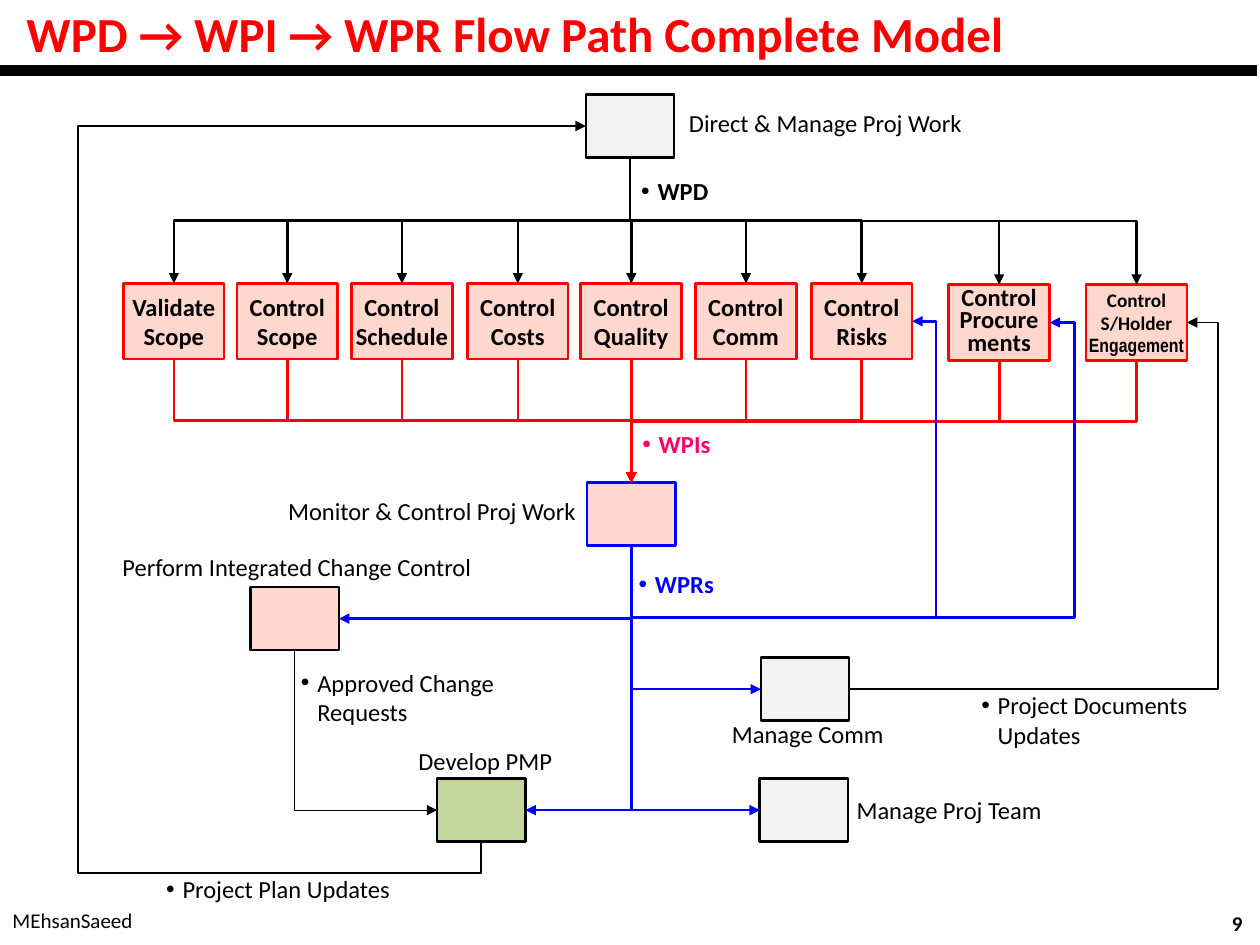
from lxml.etree import SubElement
from pptx import Presentation
from pptx.dml.color import RGBColor
from pptx.enum.shapes import MSO_CONNECTOR, MSO_SHAPE
from pptx.enum.text import MSO_ANCHOR, PP_ALIGN
from pptx.oxml.ns import qn
from pptx.util import Inches, Pt

COLORS = {"black": "000000", "red": "FF0000", "blue": "0000FF", "pink": "FF0066",
          "peach": "FFD7CD", "gray": "F2F2F2", "green": "C3D69B"}
TOP, LEFT, BOTTOM, RIGHT = range(4)


def rgb(name):
    return RGBColor.from_string(COLORS[name])


def style(paragraph, size=14, color="black", bold=False, align=PP_ALIGN.LEFT):
    paragraph.alignment = align
    font = paragraph.font
    font.name, font.size, font.bold = "Calibri", Pt(size), bold
    font.color.rgb = rgb(color)


def add_text(slide, box, text, bullet=False, anchor=MSO_ANCHOR.TOP, **look):
    frame = slide.shapes.add_textbox(*map(Inches, box)).text_frame
    frame.word_wrap = True
    frame.vertical_anchor = anchor
    paragraph = frame.paragraphs[0]
    paragraph.text = text
    style(paragraph, **look)
    if bullet:
        properties = paragraph._p.get_or_add_pPr()
        properties.set("marL", str(Inches(0.13)))
        properties.set("indent", str(-Inches(0.13)))
        SubElement(properties, qn("a:buFont")).set("typeface", "Arial")
        SubElement(properties, qn("a:buChar")).set("char", "•")


def add_box(slide, box, fill, line):
    shape = slide.shapes.add_shape(MSO_SHAPE.RECTANGLE, *map(Inches, box))
    shape.shadow.inherit = False
    shape.fill.solid()
    shape.fill.fore_color.rgb = rgb(fill)
    shape.line.color.rgb = rgb(line)
    shape.line.width = Pt(1.5)
    return shape


def side(shape, index):
    """Middle of a rectangle's side."""
    x, y = shape.left + shape.width // 2, shape.top + shape.height // 2
    return {TOP: (x, shape.top), LEFT: (shape.left, y),
            BOTTOM: (x, shape.top + shape.height),
            RIGHT: (shape.left + shape.width, y)}[index]


def format_line(connector, color, width, arrow=None):
    connector.line.color.rgb = rgb(color)
    connector.line.width = Pt(width)
    properties = connector.element.spPr
    if arrow:
        SubElement(properties.find(qn("a:ln")), qn(f"a:{arrow}End")).set("type", "triangle")
    SubElement(properties, qn("a:effectLst"))


def add_elbow(slide, start, end, color, width=1.5, arrow="tail", bends=(), vertical=True):
    """Bent connector; bends are turning positions, first along the starting axis."""
    dx, dy = end[0] - start[0], end[1] - start[1]
    if vertical:
        width_emu, height_emu = abs(dy), abs(dx)
        rotation = 90 if (dy > 0) == (dx < 0) else 270
        flip_h, flip_v = dx > 0, dy < 0
    else:
        width_emu, height_emu = abs(dx), abs(dy)
        rotation = 180 if dx < 0 else 0
        flip_h, flip_v = False, (dy < 0) != (dx < 0)
    left = (start[0] + end[0] - width_emu) // 2
    top = (start[1] + end[1] - height_emu) // 2
    connector = slide.shapes.add_connector(
        MSO_CONNECTOR.ELBOW, left, top, left + width_emu, top + height_emu)
    properties = connector.element.spPr
    transform = properties.find(qn("a:xfrm"))
    transform.set("rot", str(rotation * 60000))
    transform.set("flipH", str(int(flip_h)))
    transform.set("flipV", str(int(flip_v)))
    geometry = properties.find(qn("a:prstGeom"))
    geometry.set("prst", f"bentConnector{2 + len(bends)}")
    adjustments = geometry.find(qn("a:avLst"))
    if adjustments is None:
        adjustments = SubElement(geometry, qn("a:avLst"))
    for number, bend in enumerate(bends, 1):
        axis = (number + vertical + 1) % 2
        fraction = (bend - start[axis]) / (end[axis] - start[axis])
        guide = SubElement(adjustments, qn("a:gd"))
        guide.set("name", f"adj{number}")
        guide.set("fmla", f"val {round(fraction * 100000)}")
    format_line(connector, color, width, arrow)


def add_header(slide, box):
    left, top, width, height = box
    title = slide.shapes.title
    title.left, title.top, title.width, title.height = map(Inches, box)
    frame = title.text_frame
    frame.text = "WPD → WPI → WPR Flow Path Complete Model"
    frame.vertical_anchor = MSO_ANCHOR.MIDDLE
    frame.margin_left = Inches(0.19)
    style(frame.paragraphs[0], 28, "red", True)
    y = Inches(top + 0.68)
    rule = slide.shapes.add_connector(
        MSO_CONNECTOR.STRAIGHT, Inches(left - 0.04), y, Inches(left + 9.96), y)
    format_line(rule, "black", 6)


def add_footer(slide, box):
    left, top, width, height = box
    add_text(slide, (left, top, 1.25, height), "MEhsanSaeed",
             anchor=MSO_ANCHOR.MIDDLE, size=12)
    add_text(slide, (left + width - 2.33, top + 0.03, 2.33, height), "9",
             anchor=MSO_ANCHOR.MIDDLE, size=12, bold=True, align=PP_ALIGN.RIGHT)


def add_node(slide, box, fill, line, text, label, align=PP_ALIGN.LEFT):
    """Box with a caption; label is the caption's offset and width."""
    shape = add_box(slide, box, fill, line)
    dx, dy, width = label
    add_text(slide, (box[0] + dx, box[1] + dy, width, 0.34), text, align=align)
    return shape


def add_controls(slide, box):
    left, top, width, height = box
    controls = (("Validate Scope", 0), ("Control Scope", 0.9), ("Control Schedule", 1.81),
                ("Control Costs", 2.73), ("Control Quality", 3.63), ("Control Comm", 4.54),
                ("Control Risks", 5.46), ("Control Procurements", 6.55),
                ("Control S/Holder ", 7.64))
    shapes = []
    for text, offset in controls:
        narrow = offset > 6  # the last two boxes hold three lines each
        shape = add_box(slide, (left + offset, top + 0.01 * narrow, 0.8, height), "peach", "red")
        frame = shape.text_frame
        frame.word_wrap = True
        frame.vertical_anchor = MSO_ANCHOR.MIDDLE
        frame.margin_left = frame.margin_right = Inches(0.02)
        paragraph = frame.paragraphs[0]
        paragraph.text = text
        style(paragraph, bold=True, align=PP_ALIGN.CENTER)
        if narrow:
            paragraph.line_spacing = Pt(13)
        shapes.append(shape)
    # Stakeholder box: smaller type, last word condensed
    frame.margin_left = frame.margin_right = 0
    paragraph.font.size = Pt(11)
    run = paragraph.add_run()
    run.text = "Engagement"
    run.font.name = "Arial Narrow"
    return shapes


def add_control_flows(slide, direct, monitor, controls):
    for control in controls:
        start, end = side(direct, BOTTOM), side(control, TOP)
        add_elbow(slide, start, end, "black", bends=[(start[1] + end[1]) // 2])
    for control in controls:
        start, end = side(monitor, TOP), side(control, BOTTOM)
        if abs(start[0] - end[0]) < Inches(0.02):
            line = slide.shapes.add_connector(MSO_CONNECTOR.STRAIGHT, *start, *end)
            line.begin_connect(monitor, TOP)
            line.end_connect(control, BOTTOM)
            format_line(line, "red", 1.5, "head")
        else:
            add_elbow(slide, start, end, "red", arrow="head",
                      bends=[(start[1] + end[1]) // 2])


def add_report_flows(slide, monitor, targets, feedback):
    start = side(monitor, BOTTOM)
    for shape, index in targets:
        add_elbow(slide, start, side(shape, index), "blue")
    for shape, x in feedback:
        add_elbow(slide, start, side(shape, RIGHT), "blue", bends=[Inches(4.9), Inches(x)])


def main():
    presentation = Presentation()
    presentation.slide_width, presentation.slide_height = Inches(10), Inches(7.5)
    slide = presentation.slides.add_slide(presentation.slide_layouts[5])
    add_header(slide, (0.02, -0.12, 9.94, 0.77))
    add_footer(slide, (0, 7.1, 9.96, 0.4))

    # Processes
    right = PP_ALIGN.RIGHT
    direct = add_node(slide, (4.65, 0.75, 0.7, 0.5), "gray", "black",
                      "Direct & Manage Proj Work", (0.72, 0.06, 2.43))
    controls = add_controls(slide, (0.98, 2.25, 8.44, 0.6))
    monitor = add_node(slide, (4.66, 3.83, 0.7, 0.5), "peach", "blue",
                       "Monitor & Control Proj Work", (-2.64, 0.06, 2.65), right)
    change = add_node(slide, (1.99, 4.66, 0.7, 0.5), "peach", "black",
                      "Perform Integrated Change Control", (-1.2, -0.33, 3.05), right)
    plan = add_node(slide, (3.47, 6.18, 0.7, 0.5), "green", "black",
                    "Develop PMP", (-0.38, -0.31, 1.39), right)
    team = add_node(slide, (6.03, 6.18, 0.7, 0.5), "gray", "black",
                    "Manage Proj Team", (0.67, 0.08, 1.8))
    comm = add_node(slide, (6.04, 5.22, 0.7, 0.5), "gray", "black",
                    "Manage Comm", (-0.33, 0.44, 1.41))

    # Flows
    add_control_flows(slide, direct, monitor, controls)
    add_report_flows(slide, monitor,
                     ((plan, RIGHT), (change, RIGHT), (comm, LEFT), (team, LEFT)),
                     ((controls[6], 7.43), (controls[7], 8.53)))
    add_elbow(slide, side(change, BOTTOM), side(plan, LEFT), "black", 0.5)
    add_elbow(slide, side(comm, RIGHT), side(controls[8], RIGHT), "black", 1,
              bends=[Inches(9.67)], vertical=False)
    add_elbow(slide, side(direct, LEFT), side(plan, BOTTOM), "black", 1, "head",
              bends=[Inches(0.62), Inches(6.93)], vertical=False)

    # Flow labels
    for text, box, color, bold in (
            ("WPD", (4.99, 1.35, 0.78, 0.34), "black", True),
            ("WPIs", (5, 3.36, 0.77, 0.34), "pink", True),
            ("WPRs", (4.97, 4.47, 0.8, 0.34), "blue", True),
            ("Approved Change Requests", (2.29, 5.25, 1.78, 0.57), "black", False),
            ("Project Documents Updates", (7.69, 5.43, 1.89, 0.57), "black", False),
            ("Project Plan Updates", (1.22, 6.89, 2.11, 0.34), "black", False)):
        add_text(slide, box, text, bullet=True, color=color, bold=bold)

    presentation.save("out.pptx")


if __name__ == "__main__":
    main()
